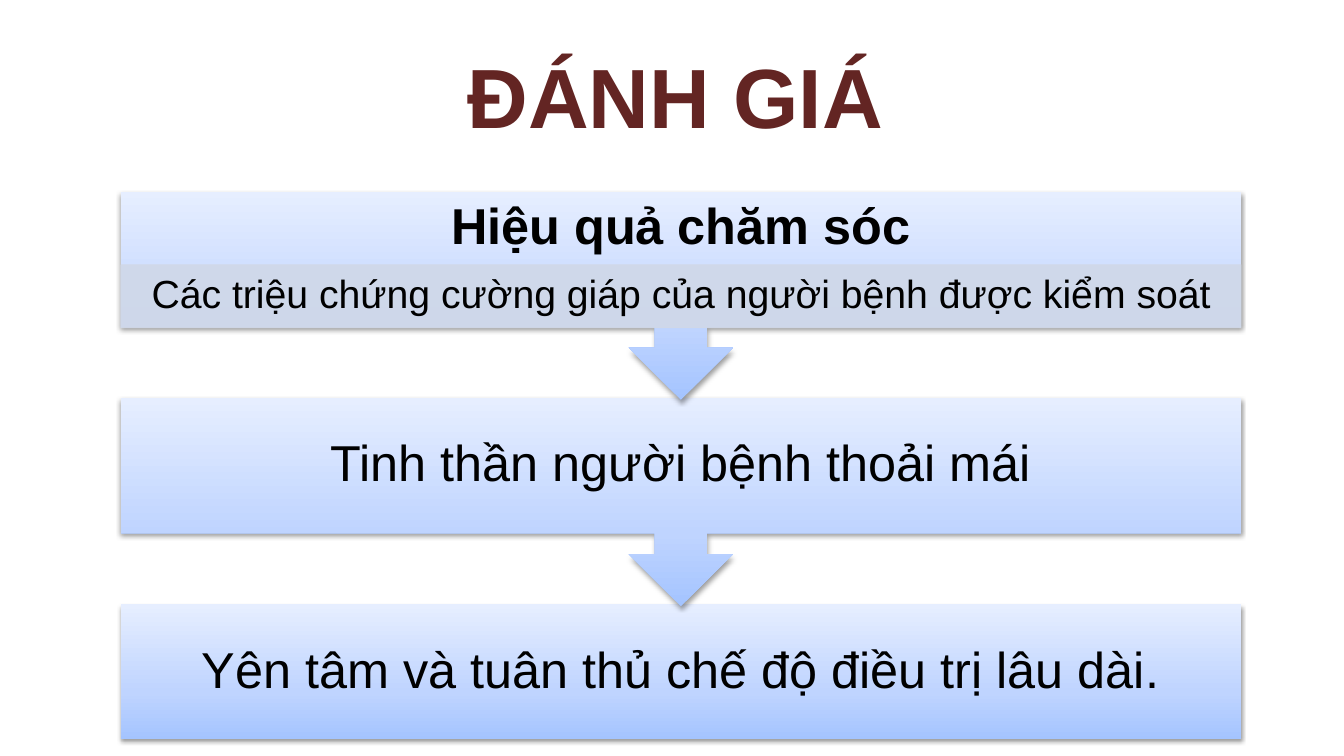
from pptx import Presentation
from pptx.dml.color import RGBColor as Rgb
from pptx.enum.shapes import MSO_SHAPE as Kind
from pptx.enum.text import MSO_ANCHOR as Anchor, PP_ALIGN as Align
from pptx.oxml import parse_xml as to_xml
from pptx.oxml.ns import nsdecls
from pptx.util import Pt

HUES = {"title": "632523", "text": "000000", "band": "D0D8E8",
        "deep": "A4C4FF", "mid": "BFD4FF", "pale": "E6EEFF"}
LEFT, TOP, WIDE = 86.4, 136.8, 800
STEP, BODY, CALL = 147.4, 96.6, 148.8
HEAD, BAND = 52.4, 44.8
STEPS = ["Hiệu quả chăm sóc", "Tinh thần người bệnh thoải mái",
         "Yên tâm và tuân thủ chế độ điều trị lâu dài."]
NOTE = "Các triệu chứng cường giáp của người bệnh được kiểm soát"


class Deck:
    """Hold the style and the current slide."""

    def __init__(self):
        self.prs = Presentation()
        self.prs.slide_width, self.prs.slide_height = Pt(960), Pt(540)
        self.slide = self.prs.slides.add_slide(self.prs.slide_layouts[5])

    def label(self, shape, text, size, hue="text", bold=False, gap=0.9):
        frame = shape.text_frame
        frame.text = text
        frame.word_wrap = True
        frame.vertical_anchor = Anchor.MIDDLE
        para = frame.paragraphs[0]
        para.alignment = Align.CENTER
        para.line_spacing = gap
        font = para.runs[0].font
        font.name, font.size, font.bold = "Arial", Pt(size), bold
        font.color.rgb = Rgb.from_string(HUES[hue])
        return frame

    def title(self, text):
        shape = self.slide.shapes.title
        shape.left, shape.top = Pt(LEFT), Pt(33)
        shape.width, shape.height = Pt(792), Pt(70)
        self.label(shape, text, 60, "title", True, 1.0)

    def add(self, kind, top, high):
        return self.slide.shapes.add_shape(
            kind, Pt(LEFT), Pt(top), Pt(WIDE), Pt(high))

    def blend(self, shape):
        stops = "".join(
            f'<a:gs pos="{pos}"><a:srgbClr val="{HUES[hue]}"/></a:gs>'
            for pos, hue in ((0, "deep"), (35000, "mid"), (100000, "pale")))
        props = shape.element.spPr
        props.append(to_xml(
            f'<a:gradFill {nsdecls("a")} rotWithShape="1"><a:gsLst>{stops}'
            '</a:gsLst><a:lin ang="16200000" scaled="0"/></a:gradFill>'))
        shape.line.fill.background()
        props.append(to_xml(
            f'<a:effectLst {nsdecls("a")}><a:outerShdw blurRad="{Pt(3.1)}" '
            f'dist="{Pt(1.6)}" dir="5400000" rotWithShape="0">'
            '<a:srgbClr val="000000"><a:alpha val="38000"/></a:srgbClr>'
            '</a:outerShdw></a:effectLst>'))

    def step(self, text, top, last=False, bold=False, foot=0):
        kind = Kind.RECTANGLE if last else Kind.DOWN_ARROW_CALLOUT
        shape = self.add(kind, top, BODY if last else CALL)
        if not last:
            shape.adjustments[3] = BODY / CALL
        self.blend(shape)
        frame = self.label(shape, text, 36, bold=bold)
        frame.margin_left = frame.margin_right = Pt(20)
        frame.margin_top, frame.margin_bottom = Pt(0), Pt(foot)

    def band(self, text, top):
        shape = self.add(Kind.RECTANGLE, top, BAND)
        shape.shadow.inherit = False
        shape.line.width = Pt(0.75)
        for fill in (shape.fill, shape.line.fill):
            fill.solid()
            fill.fore_color.rgb = Rgb.from_string(HUES["band"])
        for hue in shape.element.spPr.iter("{*}srgbClr"):
            hue.append(to_xml(f'<a:alpha {nsdecls("a")} val="90000"/>'))
        frame = self.label(shape, text, 28)
        frame.margin_left = frame.margin_right = Pt(16)
        frame.margin_top = frame.margin_bottom = Pt(3)


def main():
    deck = Deck()
    deck.title("ĐÁNH GIÁ")
    end = len(STEPS) - 1
    for row, text in reversed(list(enumerate(STEPS))):
        deck.step(text, TOP + row * STEP, row == end, row == 0,
                  BODY - HEAD if row == 0 else 0)
    deck.band(NOTE, TOP + HEAD)
    deck.prs.save("out.pptx")


if __name__ == "__main__":
    main()
